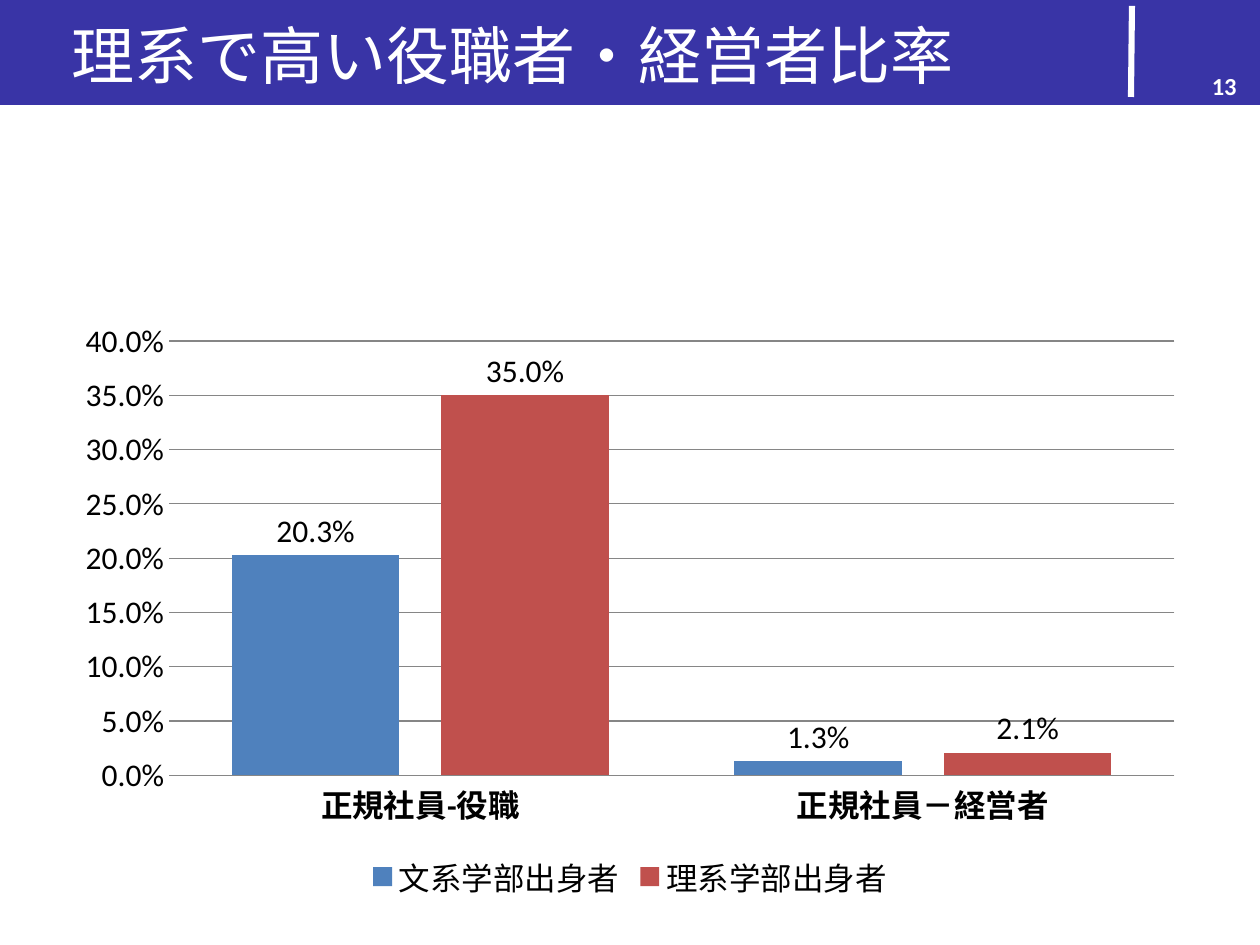
from lxml import etree
from pptx import Presentation
from pptx.chart.data import CategoryChartData
from pptx.dml.color import RGBColor
from pptx.enum.chart import XL_CHART_TYPE, XL_LABEL_POSITION, XL_LEGEND_POSITION, XL_TICK_MARK
from pptx.enum.shapes import MSO_CONNECTOR, MSO_SHAPE
from pptx.enum.text import MSO_ANCHOR, PP_ALIGN
from pptx.oxml.ns import qn
from pptx.util import Pt

COLUMNS = XL_CHART_TYPE.COLUMN_CLUSTERED
OUTSIDE_END = XL_LABEL_POSITION.OUTSIDE_END
BOTTOM = XL_LEGEND_POSITION.BOTTOM
NO_TICKS = XL_TICK_MARK.NONE
STRAIGHT = MSO_CONNECTOR.STRAIGHT
RECTANGLE = MSO_SHAPE.RECTANGLE
MIDDLE = MSO_ANCHOR.MIDDLE
LEFT, RIGHT = PP_ALIGN.LEFT, PP_ALIGN.RIGHT

INDIGO = RGBColor(0x39, 0x34, 0xA6)
WHITE = RGBColor(0xFF, 0xFF, 0xFF)
BLACK = RGBColor(0, 0, 0)
GREY = RGBColor(0x86, 0x86, 0x86)
BLUE = RGBColor(0x4F, 0x81, 0xBD)
RED = RGBColor(0xC0, 0x50, 0x4D)

FONT = "Calibri"
PERCENT = "0.0%"
TITLE_ONLY = 5
PX_PER_INCH = 126


def px(*lengths):
    return [round(length * 914400 / PX_PER_INCH) for length in lengths]


class SlideBuilder:
    def __init__(self, page):
        self.page = page
        self.shapes = page.shapes

    def style(self, font, size, color, bold=False):
        font.name, font.size, font.bold = FONT, Pt(size), bold
        font.color.rgb = color

    def fill_text(self, box, text, size, color, align, bold=False):
        frame = box.text_frame
        frame.word_wrap = True
        frame.vertical_anchor = MIDDLE
        para = frame.paragraphs[0]
        para.text, para.alignment = text, align
        self.style(para.font, size, color, bold)

    def band(self, left, top, width, height, color):
        box = self.shapes.add_shape(RECTANGLE, *px(left, top, width, height))
        box.shadow.inherit = False
        box.fill.solid()
        box.fill.fore_color.rgb = color
        box.line.fill.background()

    def rule(self, x1, y1, x2, y2, color, weight):
        line = self.shapes.add_connector(STRAIGHT, *px(x1, y1, x2, y2))
        line.line.color.rgb = color
        line.line.width = Pt(weight)
        etree.SubElement(line._element.spPr, qn("a:effectLst"))

    def title(self, left, top, width, height, text, size, color):
        box = self.shapes.title
        box.left, box.top, box.width, box.height = px(left, top, width, height)
        self.fill_text(box, text, size, color, LEFT)
        # Bring the title in front of the header bands
        self.shapes._spTree.append(box._element)

    def label(self, left, top, width, height, text, size, color, align, bold):
        box = self.shapes.add_textbox(*px(left, top, width, height))
        self.fill_text(box, text, size, color, align, bold)

    def column_chart(self, left, top, width, height, categories, series, size):
        data = CategoryChartData(number_format=PERCENT)
        data.categories = categories
        for name, values, _ in series:
            data.add_series(name, values)
        chart = self.shapes.add_chart(COLUMNS, *px(left, top, width, height), data).chart
        self.style(chart.font, size, BLACK)
        chart.has_title = False

        chart.has_legend = True
        chart.legend.position = BOTTOM
        chart.legend.include_in_layout = False

        # Axes
        for axis in (chart.category_axis, chart.value_axis):
            axis.major_tick_mark = axis.minor_tick_mark = NO_TICKS
        self.style(chart.category_axis.tick_labels.font, size, BLACK, bold=True)
        chart.category_axis.format.line.color.rgb = GREY
        values_axis = chart.value_axis
        values_axis.minimum_scale, values_axis.maximum_scale = 0, 0.4
        values_axis.major_unit = 0.05
        values_axis.format.line.fill.background()
        values_axis.major_gridlines.format.line.color.rgb = GREY
        values_axis.tick_labels.number_format = PERCENT
        values_axis.tick_labels.number_format_is_linked = False

        # Columns and their labels
        plot = chart.plots[0]
        plot.gap_width, plot.overlap = 75, -25
        plot.vary_by_categories = False
        for column, (_, _, color) in zip(plot.series, series):
            column.format.fill.solid()
            column.format.fill.fore_color.rgb = color
            labels = column.data_labels
            labels.show_value = True
            labels.number_format = PERCENT
            labels.number_format_is_linked = False
            labels.position = OUTSIDE_END
            self.style(labels.font, size, BLACK)


def main():
    deck = Presentation()
    deck.slide_width, deck.slide_height = px(1260, 945)
    page = deck.slides.add_slide(deck.slide_layouts[TITLE_ONLY])
    builder = SlideBuilder(page)

    # Header
    builder.band(0, 0, 988, 105, INDIGO)
    builder.band(988, 0, 272, 105, INDIGO)
    builder.rule(1132, 6, 1131, 97, WHITE, 3.5)
    builder.title(59, 10, 1024, 88, "理系で高い役職者・経営者比率", 36, WHITE)

    # Share of managers and executives by field of study
    builder.column_chart(
        63, 310, 1134, 596,
        ["正規社員-役職", "正規社員－経営者"],
        [("文系学部出身者", (0.203, 0.013), BLUE),
         ("理系学部出身者", (0.35, 0.021), RED)],
        18,
    )

    # Page number
    builder.label(955, 53, 294, 66, "13", 14, WHITE, RIGHT, bold=True)

    deck.save("out.pptx")


if __name__ == "__main__":
    main()
